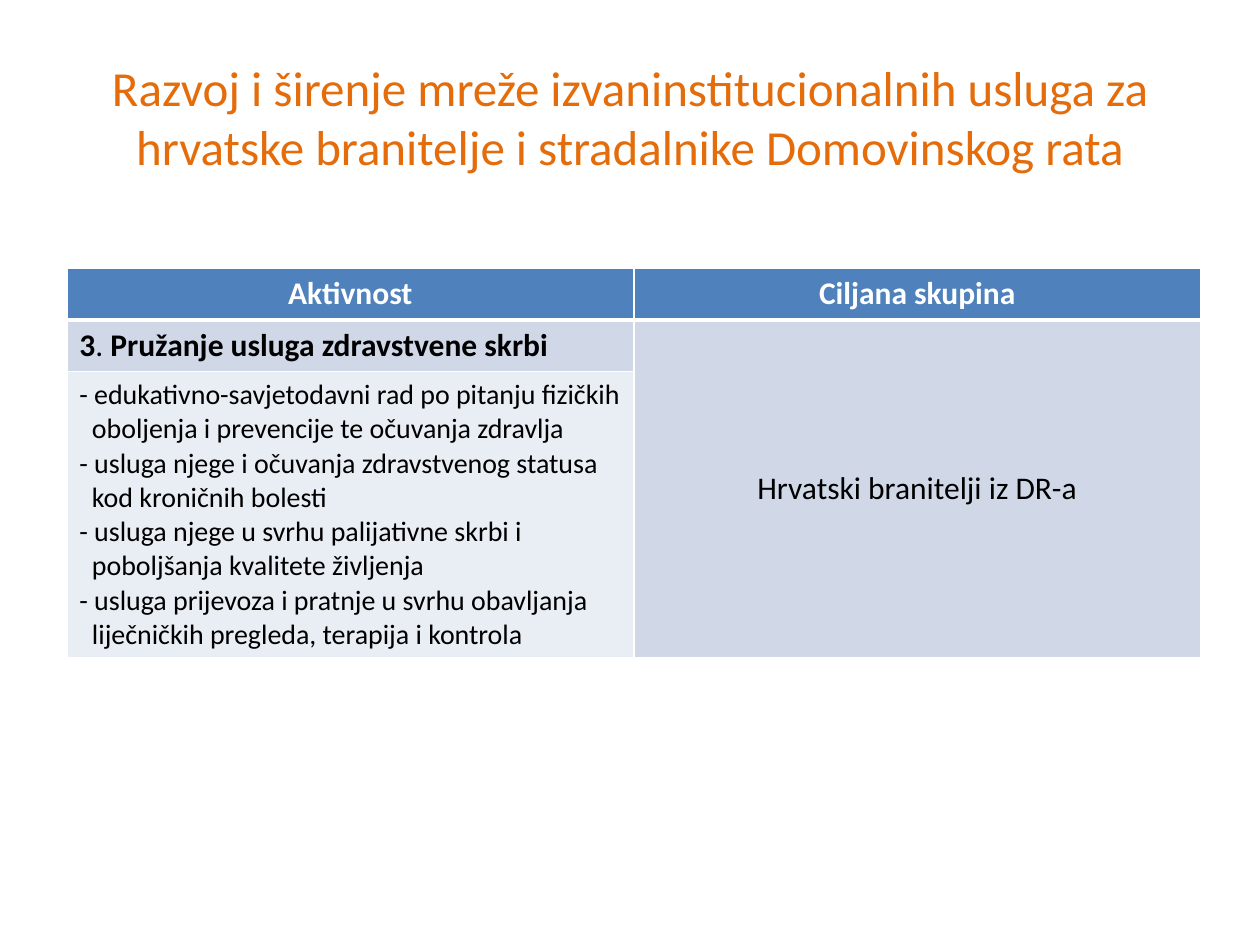
from dataclasses import dataclass

from lxml.etree import SubElement
from pptx import Presentation
from pptx.dml.color import RGBColor
from pptx.enum.text import MSO_ANCHOR as Anchor, PP_ALIGN as Align
from pptx.oxml.ns import qn
from pptx.util import Inches, Pt


@dataclass(frozen=True)
class Theme:
    font: str = "Calibri"
    title: str = "E46C0A"
    text: str = "000000"
    white: str = "FFFFFF"
    header: str = "4F81BD"
    band_dark: str = "D0D8E8"
    band_light: str = "E9EDF4"
    title_size: int = 28
    body_size: int = 18
    list_size: int = 16
    rule: int = 1
    header_rule: int = 3


THEME = Theme()

TITLE = ("Razvoj i širenje mreže izvaninstitucionalnih usluga za "
         "hrvatske branitelje i stradalnike Domovinskog rata")
HEADERS = ["Aktivnost", "Ciljana skupina"]
ACTIVITY = [("3", True), (". ", False), ("Pružanje usluga zdravstvene skrbi", True)]
TARGET_GROUP = "Hrvatski branitelji iz DR-a"
SERVICES = [
    "- edukativno-savjetodavni rad po pitanju fizičkih oboljenja i prevencije te očuvanja zdravlja",
    "- usluga njege i očuvanja zdravstvenog statusa kod kroničnih bolesti",
    "- usluga njege u svrhu palijativne skrbi i poboljšanja kvalitete življenja",
    "- usluga prijevoza i pratnje u svrhu obavljanja liječničkih pregleda, terapija i kontrola",
]


def write(frame, paragraphs, size=THEME.body_size, color=THEME.text, bold=False,
          align=Align.LEFT, hanging=0):
    """Fill a text frame; a paragraph is a string or a list of (text, bold) runs."""
    for index, content in enumerate(paragraphs):
        paragraph = frame.paragraphs[0] if index == 0 else frame.add_paragraph()
        paragraph.alignment = align
        if hanging:
            properties = paragraph._p.get_or_add_pPr()
            properties.set("marL", str(Inches(hanging)))
            properties.set("indent", str(-Inches(hanging)))
        runs = [(content, bold)] if isinstance(content, str) else content
        for text, is_bold in runs:
            run = paragraph.add_run()
            run.text = text
            run.font.name = THEME.font
            run.font.size = Pt(size)
            run.font.bold = is_bold
            run.font.color.rgb = RGBColor.from_string(color)


def style_cell(cell, fill, top=THEME.rule, bottom=THEME.rule):
    """Give a cell its fill and white rules."""
    properties = cell._tc.get_or_add_tcPr()
    widths = {"a:lnL": THEME.rule, "a:lnR": THEME.rule, "a:lnT": top, "a:lnB": bottom}
    for tag, width in widths.items():
        line = SubElement(properties, qn(tag), w=str(Pt(width)))
        solid = SubElement(line, qn("a:solidFill"))
        SubElement(solid, qn("a:srgbClr"), val=THEME.white)
    cell.fill.solid()
    cell.fill.fore_color.rgb = RGBColor.from_string(fill)


def add_title(slide, left, top, width, height):
    frame = slide.shapes.add_textbox(left, top, width, height).text_frame
    frame.word_wrap = True
    frame.vertical_anchor = Anchor.MIDDLE
    write(frame, [TITLE], size=THEME.title_size, color=THEME.title, align=Align.CENTER)


def add_activity_table(slide, left, top, width, height):
    table = slide.shapes.add_table(3, 2, left, top, width, height).table
    for column in table.columns:
        column.width = width // 2
    short_row = Inches(0.41)
    for row, row_height in zip(table.rows, [short_row, short_row, height - 2 * short_row]):
        row.height = row_height

    # Header row
    for column, heading in enumerate(HEADERS):
        cell = table.cell(0, column)
        style_cell(cell, THEME.header, bottom=THEME.header_rule)
        write(cell.text_frame, [heading], color=THEME.white, bold=True, align=Align.CENTER)

    # Activity and its services
    activity, services = table.cell(1, 0), table.cell(2, 0)
    style_cell(activity, THEME.band_dark, top=THEME.header_rule)
    write(activity.text_frame, [ACTIVITY])
    style_cell(services, THEME.band_light)
    write(services.text_frame, SERVICES, size=THEME.list_size, hanging=0.1)

    # Target group, spanning both body rows
    group = table.cell(1, 1)
    group.merge(table.cell(2, 1))
    style_cell(group, THEME.band_dark, top=THEME.header_rule)
    group.vertical_anchor = Anchor.MIDDLE
    write(group.text_frame, [TARGET_GROUP], align=Align.CENTER)


def main():
    deck = Presentation()
    deck.slide_width, deck.slide_height = Inches(10), Inches(7.5)
    slide = deck.slides.add_slide(deck.slide_layouts[6])
    add_title(slide, Inches(0.5), Inches(0.3), Inches(9), Inches(1.25))
    add_activity_table(slide, Inches(0.53), Inches(2.13), Inches(9), Inches(3.09))
    deck.save("out.pptx")


if __name__ == "__main__":
    main()
